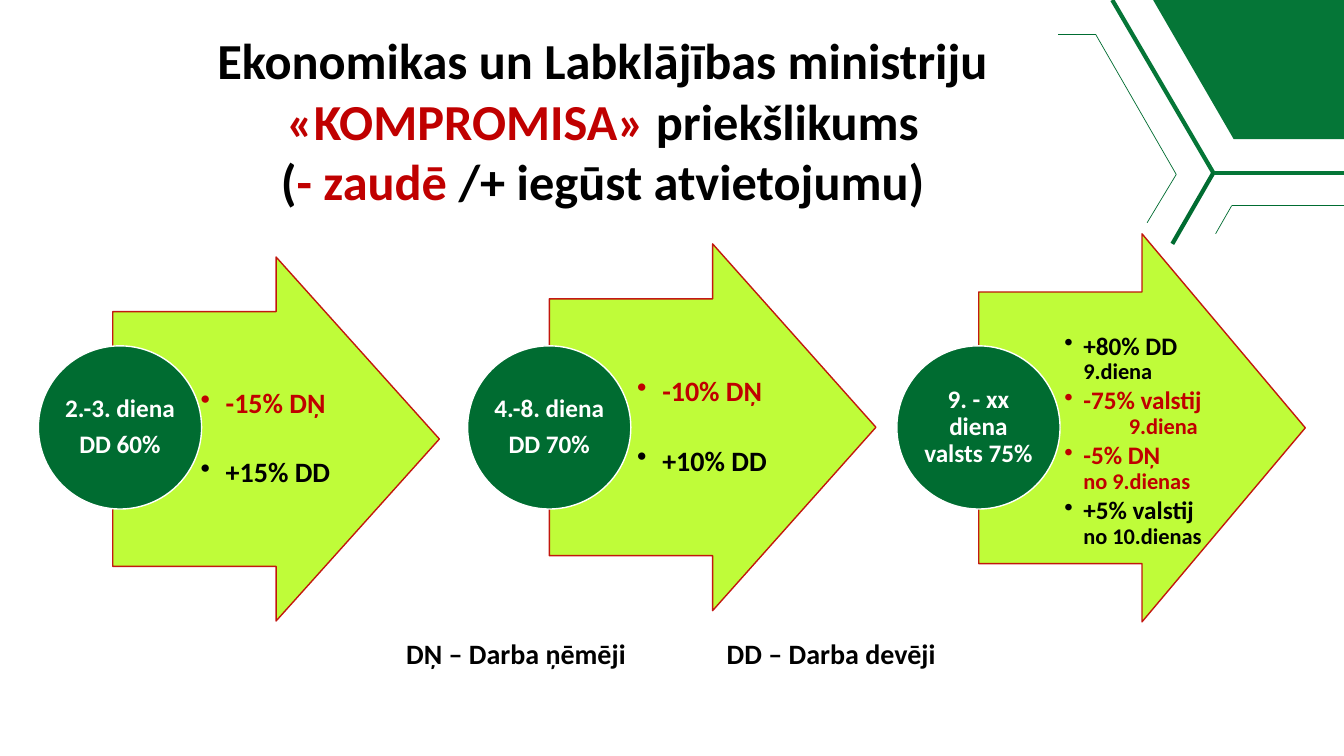
import pptx
import pptx.util
import pptx.dml.color
import pptx.oxml
import pptx.oxml.ns
import pptx.enum.shapes
import pptx.enum.text
from lxml import etree

Pt = pptx.util.Pt
Align = pptx.enum.text.PP_ALIGN
Anchor = pptx.enum.text.MSO_ANCHOR
Preset = pptx.enum.shapes.MSO_SHAPE
qn = pptx.oxml.ns.qn

BLACK, RED, WHITE = "000000", "C00000", "FFFFFF"
GREEN, CORNER_GREEN, LIME = "006C31", "057637", "B9FC24"

TITLE = [
    [("Ekonomikas un Labklājības ministriju ", BLACK), ("«KOMPROMISA» ", RED),
     ("priekšlikums", BLACK)],
    [("(", BLACK), ("- zaudē ", RED), ("/+ iegūst atvietojumu)", BLACK)],
]
LEGEND = "DŅ – Darba ņēmēji\tDD – Darba devēji"

# Each effect: text, colour, size, left indent, bulleted, space before
STAGES = [
    {"label": ["2.-3. diena", "DD 60%"], "arrow": (80.6, 183.6, 260), "insets": (4.3, 0.7),
     "effects": [("-15% DŅ", RED, 20, 18, True, 0), ("+15% DD", BLACK, 20, 18, True, 28)]},
    {"label": ["4.-8. diena", "DD 70%"], "arrow": (392.4, 174.2, 262), "insets": (4.3, 0.7),
     "effects": [("-10% DŅ", RED, 20, 18, True, 0), ("+10% DD", BLACK, 20, 18, True, 28)]},
    {"label": ["9. - xx diena valsts 75%"], "arrow": (699.1, 167, 277.2), "insets": (2.9, 20),
     "effects": [("+80% DD", BLACK, 18, 13.5, True, 0), ("9.diena", BLACK, 16, 13.5, False, 0),
                 ("-75% valstij", RED, 18, 13.5, True, 2.5), ("9.diena", RED, 16, 46, False, 0),
                 ("-5% DŅ", RED, 18, 13.5, True, 2.5), ("no 9.dienas", RED, 16, 13.5, False, 0),
                 ("+5% valstij", BLACK, 18, 13.5, True, 2.5),
                 ("no 10.dienas", BLACK, 16, 13.5, False, 0)]},
]
ARROW_WIDTH = 233.3
CIRCLE_LEFT, CIRCLE_TOP, CIRCLE_SIZE, CIRCLE_STEP = 27.4, 247, 116.6, 306.6

THIN_LINES = [(756, 24.5, 782.6, 24.5), (782.6, 24.5, 840.2, 124.6),
              (819.4, 159.1, 840.2, 124.6), (868.3, 167, 879.8, 146.9),
              (879.8, 146.9, 960, 146.9)]
THICK_LINES = [(794.5, 0, 866.9, 123.8, CORNER_GREEN), (866.9, 123.1, 837.4, 174.2, GREEN),
               (866.9, 123.8, 960, 123.8, CORNER_GREEN)]
CORNER = [(823.7, 0), (960, 0), (960, 99.4), (881.3, 99.4)]


def color(value):
    return pptx.dml.color.RGBColor.from_string(value)


def add_text(paragraph, text, size=18, fill=BLACK):
    run = paragraph.add_run()
    run.text = text
    run.font.name = "Calibri"
    run.font.size = Pt(size)
    run.font.bold = True
    run.font.color.rgb = color(fill)


def next_paragraph(frame, index):
    return frame.add_paragraph() if index else frame.paragraphs[0]


def set_frame(frame, anchor, left=7.2, top=3.6, right=7.2, bottom=3.6):
    frame.word_wrap = True
    frame.vertical_anchor = anchor
    frame.margin_left, frame.margin_top = Pt(left), Pt(top)
    frame.margin_right, frame.margin_bottom = Pt(right), Pt(bottom)


def style(shape, fill, line=None, opacity=None):
    shape.shadow.inherit = False
    shape.fill.solid()
    shape.fill.fore_color.rgb = color(fill)
    if line:
        shape.line.color.rgb = color(line)
        shape.line.width = Pt(1)
    else:
        shape.line.fill.background()
    if opacity:
        for rgb in shape._element.spPr.iter(qn("a:srgbClr")):
            etree.SubElement(rgb, qn("a:alpha"), val=str(opacity * 1000))


def add_line(shapes, x1, y1, x2, y2, fill, width):
    line = shapes.add_connector(pptx.enum.shapes.MSO_CONNECTOR.STRAIGHT,
                                Pt(x1), Pt(y1), Pt(x2), Pt(y2))
    line.line.color.rgb = color(fill)
    line.line.width = Pt(width)
    etree.SubElement(line._element.spPr, qn("a:effectLst"))


def add_effects(shapes, stage):
    """Write the bulleted gains and losses inside the body of an arrow."""
    left, top, height = stage["arrow"]
    box = shapes.add_textbox(Pt(left + ARROW_WIDTH / 4), Pt(top + 0.15 * height),
                             Pt(113.8), Pt(0.7 * height))
    side, upper = stage["insets"]
    set_frame(box.text_frame, Anchor.MIDDLE, side, upper, side / 2, 0.7)
    for index, (text, fill, size, indent, bulleted, before) in enumerate(stage["effects"]):
        paragraph = next_paragraph(box.text_frame, index)
        properties = paragraph._p.get_or_add_pPr()
        properties.set("marL", str(Pt(indent)))
        if bulleted:
            properties.set("indent", str(-Pt(indent)))
            etree.SubElement(properties, qn("a:buChar"), char="•")
        paragraph.line_spacing = 0.9
        paragraph.space_before = Pt(before)
        add_text(paragraph, text, size, fill)


def add_stage(shapes, stage, index):
    left, top, height = stage["arrow"]
    arrow = shapes.add_shape(Preset.RIGHT_ARROW, Pt(left), Pt(top), Pt(ARROW_WIDTH), Pt(height))
    arrow.adjustments[0], arrow.adjustments[1] = 0.7, 0.5
    style(arrow, LIME, RED, 90)
    add_effects(shapes, stage)

    circle = shapes.add_shape(Preset.OVAL, Pt(CIRCLE_LEFT + index * CIRCLE_STEP),
                              Pt(CIRCLE_TOP), Pt(CIRCLE_SIZE), Pt(CIRCLE_SIZE))
    style(circle, GREEN, WHITE)
    set_frame(circle.text_frame, Anchor.MIDDLE, 0.7, 0.7, 0.7, 0.7)
    for row, text in enumerate(stage["label"]):
        paragraph = next_paragraph(circle.text_frame, row)
        paragraph.alignment = Align.CENTER
        paragraph.line_spacing = 0.9
        paragraph.space_before = Pt(6 if row else 0)
        add_text(paragraph, text, 18, WHITE)


def add_corner(shapes):
    for points in THIN_LINES:
        add_line(shapes, *points, GREEN, 0.5)
    for *points, fill in THICK_LINES:
        add_line(shapes, *points, fill, 3)
    builder = shapes.build_freeform(Pt(CORNER[0][0]), Pt(CORNER[0][1]))
    builder.add_line_segments([(Pt(x), Pt(y)) for x, y in CORNER[1:]], close=True)
    style(builder.convert_to_shape(), CORNER_GREEN)


def add_title(title):
    title.left, title.top, title.width, title.height = Pt(56.2), Pt(17.3), Pt(748.8), Pt(138.2)
    set_frame(title.text_frame, Anchor.TOP)
    title.text_frame.auto_size = pptx.enum.text.MSO_AUTO_SIZE.NONE
    for index, parts in enumerate(TITLE):
        paragraph = next_paragraph(title.text_frame, index)
        paragraph.alignment = Align.CENTER
        for text, fill in parts:
            add_text(paragraph, text, 36, fill)


def add_legend(shapes):
    legend = shapes.add_textbox(Pt(283), Pt(451.4), Pt(517.7), Pt(31.7))
    set_frame(legend.text_frame, Anchor.TOP)
    paragraph = legend.text_frame.paragraphs[0]
    tabs = etree.SubElement(paragraph._p.get_or_add_pPr(), qn("a:tabLst"))
    etree.SubElement(tabs, qn("a:tab"), pos=str(Pt(229)), algn="l")
    add_text(paragraph, LEGEND, 20)


def main():
    presentation = pptx.Presentation()
    presentation.slide_width, presentation.slide_height = Pt(960), Pt(540)
    slide = presentation.slides.add_slide(presentation.slide_layouts[5])
    add_title(slide.shapes.title)
    for index, stage in enumerate(STAGES):
        add_stage(slide.shapes, stage, index)
    add_corner(slide.shapes)
    add_legend(slide.shapes)
    presentation.save("out.pptx")


if __name__ == "__main__":
    main()
